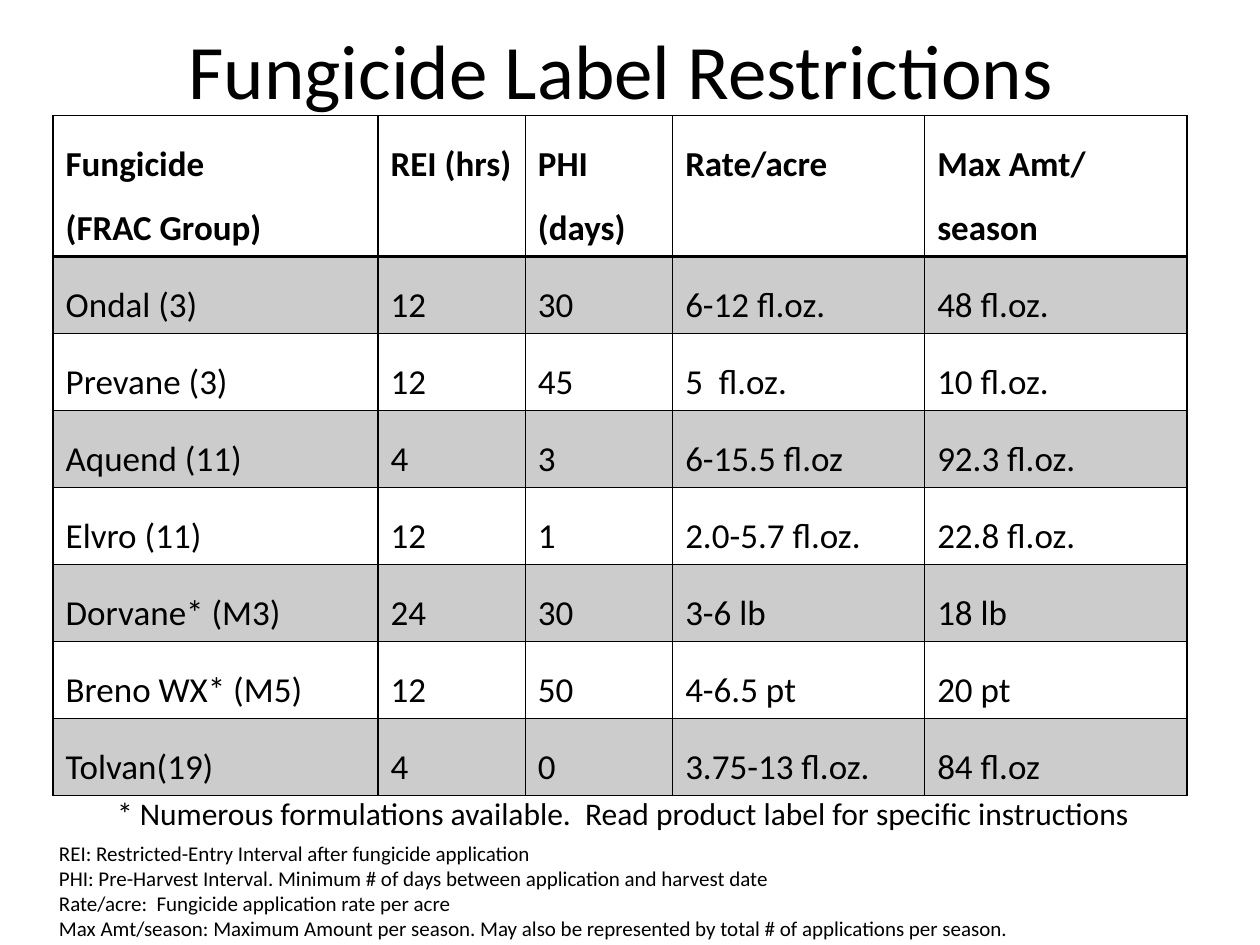
from lxml.etree import SubElement
from pptx import Presentation
from pptx.dml.color import RGBColor
from pptx.enum.text import MSO_ANCHOR, MSO_AUTO_SIZE, PP_ALIGN
from pptx.oxml.ns import qn
from pptx.util import Cm, Pt

BLACK = "000000"


def color(hex_string):
    return RGBColor.from_string(hex_string)


def format_text(frame, size, bold=False, spacing=None):
    for paragraph in frame.paragraphs:
        paragraph.line_spacing = spacing
        for run in paragraph.runs:
            run.font.name = "Calibri"
            run.font.size = Pt(size)
            run.font.bold = bold
            run.font.color.rgb = color(BLACK)


prs = Presentation()
prs.slide_width, prs.slide_height = Cm(25.4), Cm(19.05)
slide = prs.slides.add_slide(prs.slide_layouts[5])

# Title
title = slide.shapes.title
title.left, title.top, title.width, title.height = Cm(1.27), Cm(-0.2), Cm(22.86), Cm(3.18)
title.text_frame.text = "Fungicide Label Restrictions "
title.text_frame.vertical_anchor = MSO_ANCHOR.MIDDLE
title.text_frame.paragraphs[0].alignment = PP_ALIGN.CENTER
format_text(title.text_frame, 44)

# Restrictions table
restrictions = [
    ("Fungicide\n(FRAC Group)", "REI (hrs)", "PHI (days)", "Rate/acre", "Max Amt/ season"),
    ("Ondal (3)", "12", "30", "6-12 fl.oz.", "48 fl.oz."),
    ("Prevane (3)", "12", "45", "5  fl.oz.", "10 fl.oz."),
    ("Aquend (11)", "4", "3", "6-15.5 fl.oz", "92.3 fl.oz."),
    ("Elvro (11)", "12", "1", "2.0-5.7 fl.oz.", "22.8 fl.oz."),
    ("Dorvane* (M3)", "24", "30", "3-6 lb", "18 lb"),
    ("Breno WX* (M5)", "12", "50", "4-6.5 pt", "20 pt"),
    ("Tolvan(19)", "4", "0", "3.75-13 fl.oz.", "84 fl.oz"),
]
column_widths = [6.55, 2.97, 2.97, 5.08, 5.29]
table_frame = slide.shapes.add_table(
    len(restrictions), len(column_widths), Cm(1.07), Cm(2.33), Cm(22.86), Cm(13.46))
table = table_frame.table
for column, width in zip(table.columns, column_widths):
    column.width = Cm(width)
for row in table.rows:
    row.height = Cm(1.04)
table_frame.height = Cm(13.46)

for r, entries in enumerate(restrictions):
    for c, entry in enumerate(entries):
        cell = table.cell(r, c)
        cell.text_frame.text = entry
        format_text(cell.text_frame, 20, bold=r == 0, spacing=1.5)

        # Borders, with a heavier rule under the header
        cell_props = cell._tc.get_or_add_tcPr()
        for side in ("lnL", "lnR", "lnT", "lnB"):
            heavy = (r, side) in ((0, "lnB"), (1, "lnT"))
            border = SubElement(cell_props, qn(f"a:{side}"), w=str(Pt(2 if heavy else 1)))
            border_fill = SubElement(border, qn("a:solidFill"))
            SubElement(border_fill, qn("a:srgbClr"), val=BLACK)

        # Bands of 20 % black on every other row
        if r % 2:
            cell.fill.solid()
            cell.fill.fore_color.rgb = color(BLACK)
            band = cell_props.find(qn("a:solidFill")).find(qn("a:srgbClr"))
            SubElement(band, qn("a:alpha"), val="20000")
        else:
            cell.fill.background()

# Footnote and abbreviations
footnote = "* Numerous formulations available.  Read product label for specific instructions"
abbreviations = "\n".join([
    "REI: Restricted-Entry Interval after fungicide application",
    "PHI: Pre-Harvest Interval. Minimum # of days between application and harvest date",
    "Rate/acre:  Fungicide application rate per acre",
    "Max Amt/season: Maximum Amount per season. May also be represented by total # of "
    "applications per season.",
])
for note, box, size, wrap in [
    (footnote, (2.11, 15.88, 21.03, 1.02), 18, False),
    (abbreviations, (0.94, 16.81, 23.16, 2.82), 12, True),
]:
    note_frame = slide.shapes.add_textbox(*map(Cm, box)).text_frame
    note_frame.text = note
    note_frame.word_wrap = wrap
    note_frame.auto_size = MSO_AUTO_SIZE.SHAPE_TO_FIT_TEXT
    format_text(note_frame, size)

prs.save("out.pptx")
